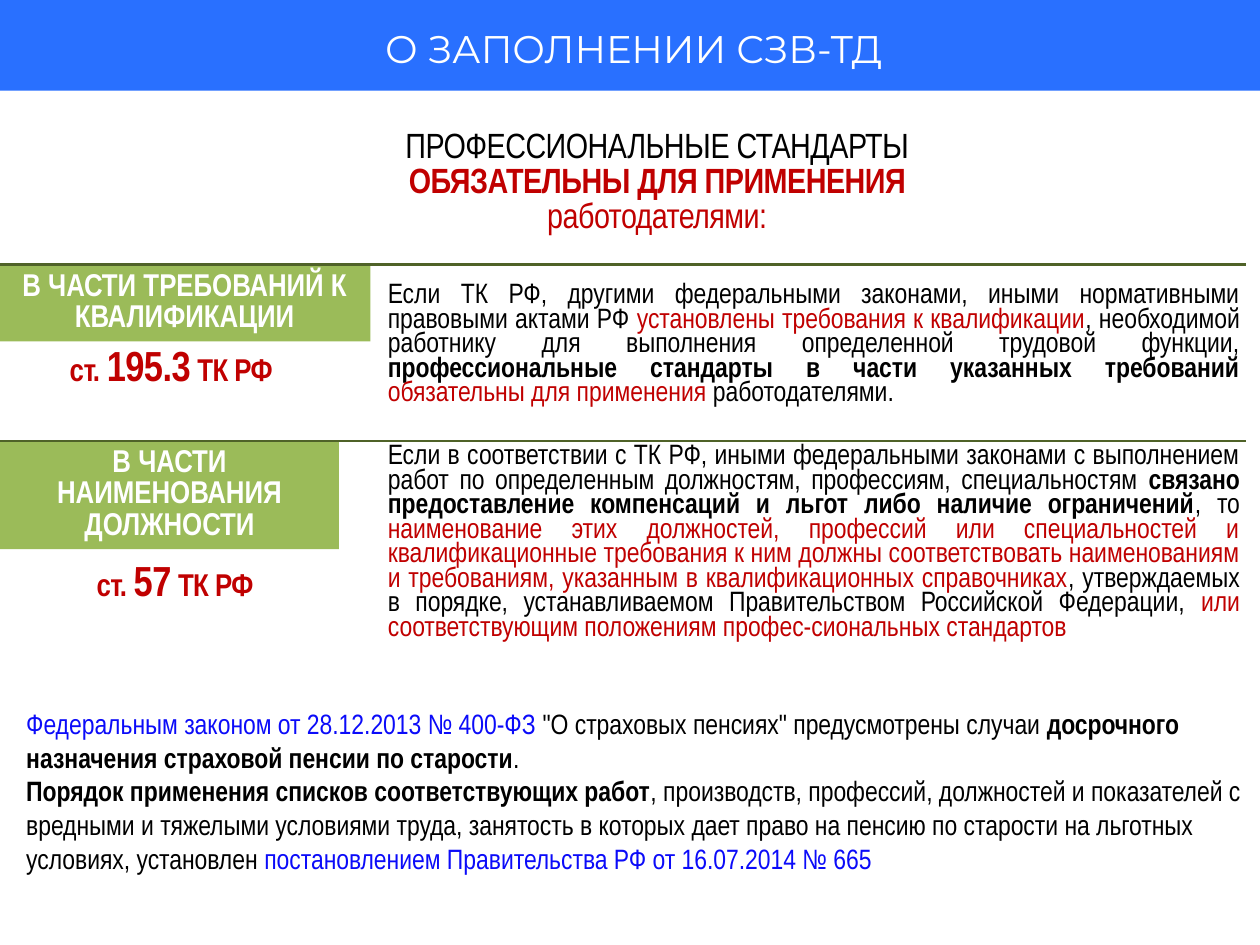
from dataclasses import dataclass
from lxml.etree import SubElement as Sub
from pptx import Presentation as Deck
from pptx.dml.color import RGBColor as Rgb
from pptx.enum.shapes import MSO_CONNECTOR as Link, MSO_SHAPE as Shape
from pptx.enum.text import MSO_ANCHOR as Anchor, MSO_AUTO_SIZE as Fit, PP_ALIGN as Align
from pptx.oxml.ns import qn
from pptx.util import Inches, Pt


@dataclass(frozen=True)
class Theme:
    black: str = "000000"
    white: str = "FFFFFF"
    red: str = "C00000"
    link: str = "0B0BF9"
    green: str = "9BBB59"
    rule: str = "4F6228"
    blue: str = "2970FF"
    font: str = "Arial Narrow"
    brand: str = "Montserrat"
    body: int = 16
    label: int = 18
    head: int = 20
    title: int = 22
    mark: int = 24
    lead: int = 14
    tight: int = -30


T = Theme()
COLS, ROWS = 100, 75
WIDE, HIGH = Inches(10), Inches(7.5)
BODY_X, BODY_W = 29.8, 69.6
RULES = (21, 35)


def col(n):
    return round(WIDE * n / COLS)


def row(n):
    return round(HIGH * n / ROWS)


def area(x, y, w, h):
    return col(x), row(y), col(w), row(h)


def style(run, size, color, bold=False, font=T.font, space=0):
    run.font.size = Pt(size)
    run.font.name = font
    run.font.bold = bold
    run.font.color.rgb = Rgb.from_string(color)
    if space:
        run._r.get_or_add_rPr().set("spc", str(space))


def write(frame, paras, size, align=Align.LEFT, lead=None, **look):
    frame.word_wrap = True
    frame.auto_size = Fit.SHAPE_TO_FIT_TEXT
    frame.vertical_anchor = Anchor.TOP
    for i, parts in enumerate(paras):
        para = frame.paragraphs[0] if i == 0 else frame.add_paragraph()
        para.alignment = align
        if lead:
            para.line_spacing = Pt(lead)
        for text, color, bold, *own in parts:
            run = para.add_run()
            run.text = text
            style(run, own[0] if own else size, color, bold, **look)


def note(slide, box, paras, size, **look):
    write(slide.shapes.add_textbox(*area(*box)).text_frame, paras, size, **look)


def block(slide, box, color):
    rect = slide.shapes.add_shape(Shape.RECTANGLE, *area(*box))
    rect.shadow.inherit = False
    rect.fill.solid()
    rect.fill.fore_color.rgb = Rgb.from_string(color)
    rect.line.fill.background()
    return rect


def label(slide, box, text):
    frame = block(slide, box, T.green).text_frame
    write(frame, [[(text, T.white, True)]], T.label, align=Align.CENTER, lead=T.label)


def cite(slide, x, y, num):
    parts = [("ст. ", T.red, True), (num, T.red, True, T.mark), (" ТК РФ", T.red, True)]
    note(slide, (x, y, 27.6, 3), [parts], T.label,
         align=Align.CENTER, lead=T.lead, space=T.tight)


def body(slide, y, h, parts):
    note(slide, (BODY_X, y, BODY_W, h), [parts], T.body, align=Align.JUSTIFY, lead=T.lead)


def rule(slide, y):
    line = slide.shapes.add_connector(Link.STRAIGHT, col(0), row(y), col(98.9), row(y))
    line.line.color.rgb = Rgb.from_string(T.rule)
    line.line.width = Pt(1.5)
    Sub(line._element.spPr, qn("a:effectLst"))


def main():
    deck = Deck()
    deck.slide_width, deck.slide_height = WIDE, HIGH
    slide = deck.slides.add_slide(deck.slide_layouts[6])

    note(slide, (29.9, 9.9, 44.5, 9.4), [
        [("ПРОФЕССИОНАЛЬНЫЕ СТАНДАРТЫ", T.black, False)],
        [("ОБЯЗАТЕЛЬНЫ ДЛЯ ПРИМЕНЕНИЯ", T.red, True)],
        [("работодателями:", T.red, False)],
    ], T.head, align=Align.CENTER, lead=T.head, space=T.tight)

    label(slide, (0, RULES[1], 26.9, 8.6), "В ЧАСТИ НАИМЕНОВАНИЯ ДОЛЖНОСТИ")
    body(slide, 34.9, 18.7, [
        ("Если в соответствии с ТК РФ, иными федеральными законами с выполнением работ "
         "по определенным должностям, профессиям, специальностям ", T.black, False),
        ("связано предоставление компенсаций и льгот либо наличие ограничений", T.black, True),
        (", то ", T.black, False),
        ("наименование этих должностей, профессий или специальностей и квалификационные "
         "требования к ним должны соответствовать наименованиям и требованиям, указанным "
         "в квалификационных справочниках", T.red, False),
        (", утверждаемых в порядке, устанавливаемом Правительством Российской Федерации, ",
         T.black, False),
        ("или соответствующим положениям профес-сиональных стандартов", T.red, False),
    ])
    cite(slide, 0.1, 45.6, "57")

    label(slide, (-0.1, RULES[0], 29.5, 6.1), "В ЧАСТИ ТРЕБОВАНИЙ К КВАЛИФИКАЦИИ")
    cite(slide, -0.2, 28.5, "195.3")
    body(slide, 22.1, 10.8, [
        ("Если ТК РФ, другими федеральными законами, иными нормативными правовыми "
         "актами РФ ", T.black, False),
        ("установлены требования к квалификации", T.red, False),
        (", необходимой работнику для выполнения определенной трудовой функции, ",
         T.black, False),
        ("профессиональные стандарты в части указанных требований ", T.black, True),
        ("обязательны для применения ", T.red, False),
        ("работодателями.", T.black, False),
    ])

    note(slide, (1.1, 55.6, 98.9, 17.2), [
        [("Федеральным законом от 28.12.2013 № 400-ФЗ ", T.link, False),
         ("\"О страховых пенсиях\" предусмотрены случаи ", T.black, False),
         ("досрочного назначения страховой пенсии по старости", T.black, True),
         (".", T.black, False)],
        [("Порядок применения списков соответствующих работ", T.black, True),
         (", производств, профессий, должностей и показателей с вредными и тяжелыми "
          "условиями труда, занятость в которых дает право на пенсию по старости на "
          "льготных условиях, установлен ", T.black, False),
         ("постановлением Правительства РФ от 16.07.2014 № 665", T.link, False)],
    ], T.body)

    for y in RULES:
        rule(slide, y)

    block(slide, (-0.1, 0, 100.1, 7.2), T.blue)
    note(slide, (4.8, 2.4, 91, 3.9), [[("О ЗАПОЛНЕНИИ СЗВ-ТД", T.white, False)]],
         T.title, align=Align.CENTER, lead=T.head, font=T.brand)

    deck.save("out.pptx")


if __name__ == "__main__":
    main()
